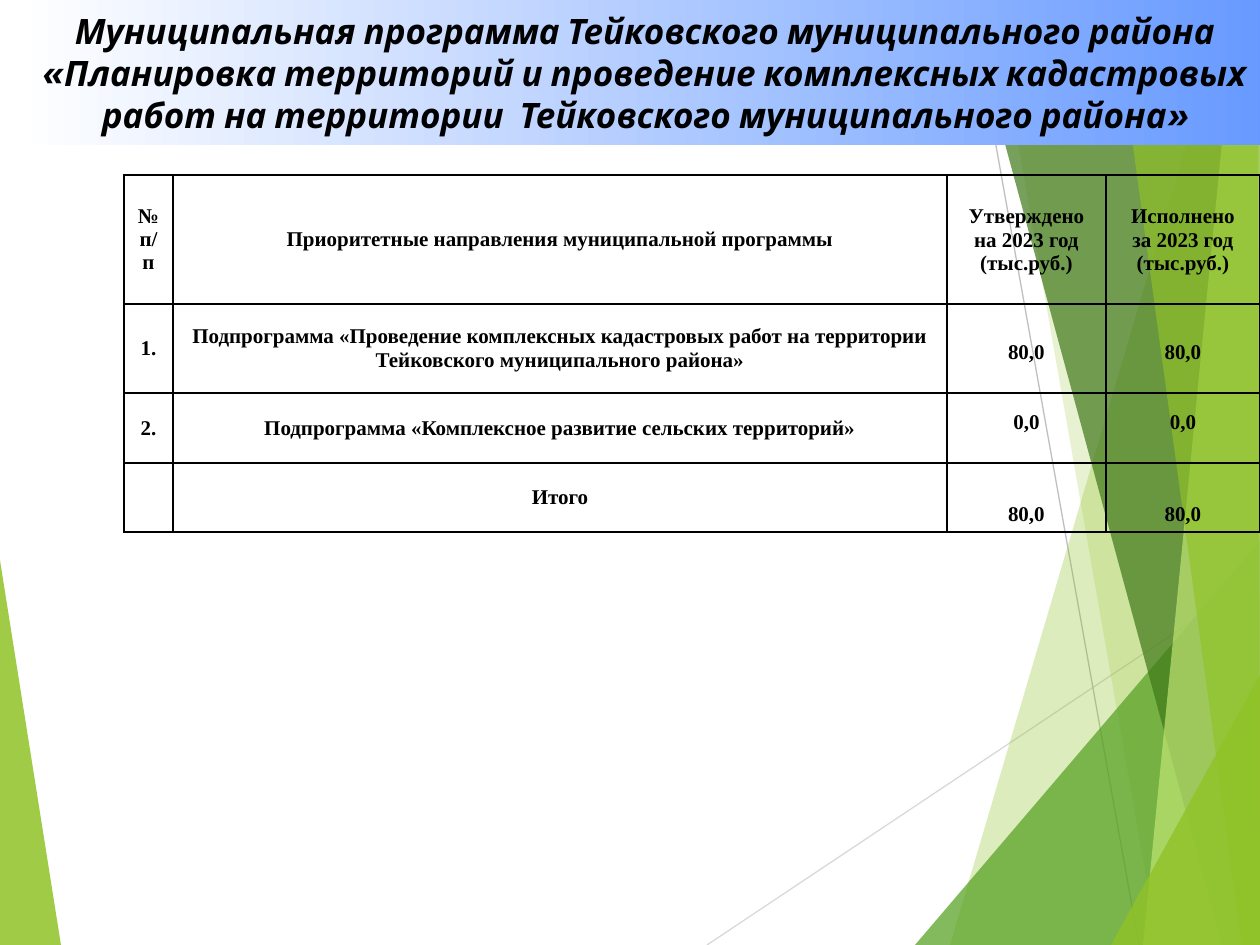
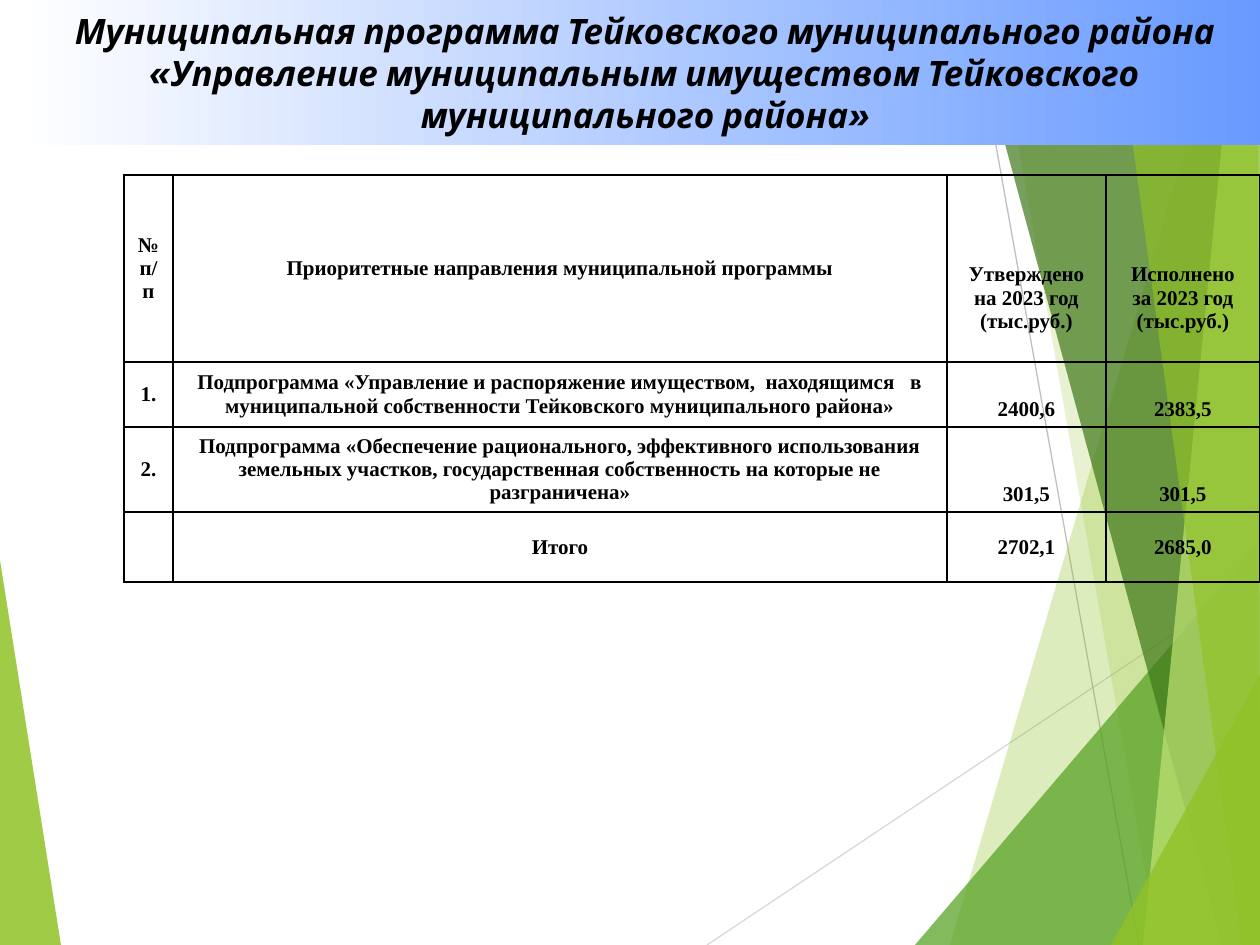
from dataclasses import dataclass

from lxml import etree
from pptx import Presentation
from pptx.dml.color import RGBColor
from pptx.enum.shapes import MSO_CONNECTOR, MSO_SHAPE
from pptx.enum.text import MSO_ANCHOR, PP_ALIGN
from pptx.oxml.ns import qn
from pptx.util import Pt

STRAIGHT = MSO_CONNECTOR.STRAIGHT
RECTANGLE = MSO_SHAPE.RECTANGLE
MIDDLE = MSO_ANCHOR.MIDDLE
BOTTOM = MSO_ANCHOR.BOTTOM
CENTER = PP_ALIGN.CENTER

SCALE = 914400 / 126
SLIDE_WIDTH, SLIDE_HEIGHT = 1260, 945


@dataclass(frozen=True)
class Theme:
    ink: str = "000000"
    band_start: str = "FFFFFF"
    band_end: str = "6699FF"
    lime: str = "90C226"
    green: str = "54A021"
    forest: str = "3F7819"
    pale_lime: str = "C0E474"
    light_ray: str = "D9D9D9"
    dark_ray: str = "BFBFBF"
    title_font: str = "Cabin"
    table_font: str = "Times New Roman"
    title_size: int = 20
    table_size: int = 12
    ray_width: float = 0.75
    border_width: int = 1


THEME = Theme()

LEFT_FACET = ([(0, 560), (61, 945), (0, 945)], THEME.lime, 85)
RAYS = [
    ((707, 945), (1260, 576), THEME.light_ray),
    ((970, 0), (1139, 945), THEME.dark_ray),
]
RIGHT_FACETS = [
    ([(1229, 0), (950, 945), (1260, 945), (1260, 0)], THEME.lime, 30),
    ([(993, 0), (1158, 945), (1260, 945), (1260, 0)], THEME.lime, 20),
    ([(915, 945), (1260, 541), (1260, 945)], THEME.green, 72),
    ([(966, 0), (1222, 945), (1260, 945), (1260, 0)], THEME.forest, 70),
    ([(1236, 0), (1143, 945), (1260, 945), (1260, 0)], THEME.pale_lime, 70),
    ([(1113, 0), (1242, 945), (1260, 945), (1258, 0)], THEME.lime, 65),
    ([(1111, 945), (1260, 675), (1260, 945)], THEME.lime, 80),
]

COLUMN_WIDTHS = [49, 774, 159, 154]
TABLE_LEFT, TABLE_TOP = 124, 175
SIDE_INSET, EDGE_INSET, RAISED_INSET = 13, 6, 29
HEADER = [
    "№\nп/п",
    "Приоритетные направления муниципальной программы",
    "Утверждено\nна 2023 год\n(тыс.руб.)",
    "Исполнено\nза 2023 год\n(тыс.руб.)",
]
PROGRAM = "Муниципальная программа Тейковского муниципального района"


@dataclass(frozen=True)
class Row:
    height: int
    cells: list
    amount_anchor: MSO_ANCHOR = BOTTOM
    amount_inset: int = EDGE_INSET


PLANNING_ROWS = [
    Row(129, HEADER, amount_inset=RAISED_INSET),
    Row(89, ["1.", "Подпрограмма «Проведение комплексных кадастровых работ на территории "
                   "Тейковского муниципального района»", "80,0", "80,0"],
        amount_inset=RAISED_INSET),
    Row(70, ["2.", "Подпрограмма «Комплексное развитие сельских территорий»", "0,0", "0,0"],
        amount_inset=RAISED_INSET),
    Row(69, ["", "Итого", "80,0", "80,0"]),
]
PROPERTY_ROWS = [
    Row(187, HEADER, amount_inset=RAISED_INSET),
    Row(65, ["1.", "Подпрограмма «Управление и распоряжение имуществом,  находящимся   в "
                   "муниципальной собственности Тейковского муниципального района»",
             "2400,6", "2383,5"]),
    Row(85, ["2.", "Подпрограмма «Обеспечение рационального, эффективного использования "
                   "земельных участков, государственная собственность на которые не "
                   "разграничена»", "301,5", "301,5"]),
    Row(70, ["", "Итого", "2702,1", "2685,0"], amount_anchor=MIDDLE),
]
SLIDES = [
    ("«Планировка территорий и проведение комплексных кадастровых работ на территории  "
     "Тейковского муниципального района»", PLANNING_ROWS),
    ("«Управление муниципальным имуществом Тейковского муниципального района»",
     PROPERTY_ROWS),
]


def px(length):
    return round(length * SCALE)


def rgb(color):
    return RGBColor.from_string(color)


def write_text(frame, text, font_name, size, italic=False):
    frame.word_wrap = True
    frame.text = text
    for paragraph in frame.paragraphs:
        paragraph.alignment = CENTER
        font = paragraph.font
        font.name = font_name
        font.size = Pt(size)
        font.bold = True
        font.italic = italic
        font.color.rgb = rgb(THEME.ink)


def add_facet(slide, points, color, opacity):
    builder = slide.shapes.build_freeform(*points[0], scale=SCALE)
    builder.add_line_segments(points[1:], close=True)
    facet = builder.convert_to_shape()
    facet.shadow.inherit = False
    facet.line.fill.background()
    facet.fill.solid()
    facet.fill.fore_color.rgb = rgb(color)
    tint = facet.fill._xPr.find(".//" + qn("a:srgbClr"))
    etree.SubElement(tint, qn("a:alpha")).set("val", str(opacity * 1000))


def add_ray(slide, start, end, color):
    ray = slide.shapes.add_connector(STRAIGHT, *map(px, start + end))
    ray.line.color.rgb = rgb(color)
    ray.line.width = Pt(THEME.ray_width)
    etree.SubElement(ray._element.spPr, qn("a:effectLst"))


def add_backdrop(slide):
    add_facet(slide, *LEFT_FACET)
    for ray in RAYS:
        add_ray(slide, *ray)
    for facet in RIGHT_FACETS:
        add_facet(slide, *facet)


def add_title_band(slide, subject):
    band = slide.shapes.add_shape(RECTANGLE, *map(px, (15, 0, 1260, 145)))
    band.shadow.inherit = False
    band.line.fill.background()
    band.fill.gradient()
    band.fill.gradient_angle = 0
    for stop, color in zip(band.fill.gradient_stops, (THEME.band_start, THEME.band_end)):
        stop.color.rgb = rgb(color)
    band.text_frame.vertical_anchor = MIDDLE
    write_text(band.text_frame, f"{PROGRAM}\n{subject}",
               THEME.title_font, THEME.title_size, italic=True)


def draw_borders(cell):
    properties = cell._tc.get_or_add_tcPr()
    for position, side in enumerate(("lnL", "lnR", "lnT", "lnB")):
        border = etree.Element(qn(f"a:{side}"), w=str(Pt(THEME.border_width)))
        stroke = etree.SubElement(border, qn("a:solidFill"))
        etree.SubElement(stroke, qn("a:srgbClr"), val=THEME.ink)
        properties.insert(position, border)


def fill_cell(cell, text, anchor, bottom_inset):
    cell.fill.background()
    draw_borders(cell)
    cell.vertical_anchor = anchor
    cell.margin_left = cell.margin_right = px(SIDE_INSET)
    cell.margin_top = px(EDGE_INSET)
    cell.margin_bottom = px(bottom_inset)
    write_text(cell.text_frame, text, THEME.table_font, THEME.table_size)


def add_budget_table(slide, rows):
    bounds = (TABLE_LEFT, TABLE_TOP, sum(COLUMN_WIDTHS), sum(row.height for row in rows))
    budget = slide.shapes.add_table(len(rows), len(COLUMN_WIDTHS), *map(px, bounds)).table
    budget.first_row = budget.horz_banding = False
    for column, width in zip(budget.columns, COLUMN_WIDTHS):
        column.width = px(width)
    for r, row in enumerate(rows):
        budget.rows[r].height = px(row.height)
        for c, text in enumerate(row.cells):
            if c < 2:
                anchor, inset = MIDDLE, EDGE_INSET
            else:
                anchor, inset = row.amount_anchor, row.amount_inset
            fill_cell(budget.cell(r, c), text, anchor, inset)


def main():
    deck = Presentation()
    deck.slide_width, deck.slide_height = px(SLIDE_WIDTH), px(SLIDE_HEIGHT)
    for subject, rows in SLIDES:
        slide = deck.slides.add_slide(deck.slide_layouts[6])
        add_backdrop(slide)
        add_budget_table(slide, rows)
        add_title_band(slide, subject)
    deck.save("out.pptx")


if __name__ == "__main__":
    main()
